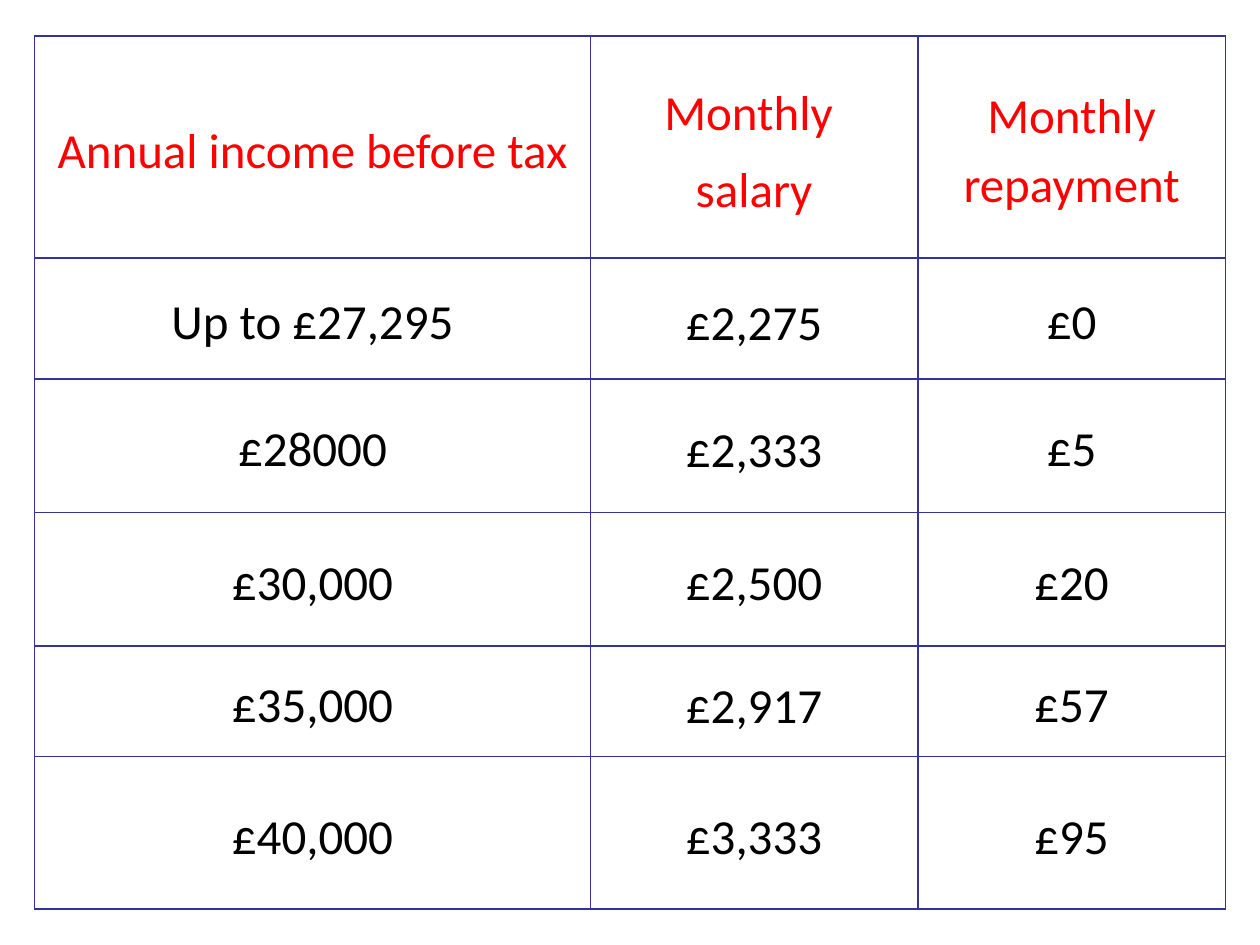
"""Build a slide with a table of income, salary and monthly repayment."""
from dataclasses import dataclass

from lxml.etree import SubElement
from pptx import Presentation
from pptx.dml.color import RGBColor
from pptx.enum.text import MSO_ANCHOR, PP_ALIGN
from pptx.oxml.ns import qn
from pptx.table import _Cell
from pptx.util import Pt

HUES = {"head": "FF0000", "body": "000000", "rule": "333399"}


@dataclass
class Column:
    width: float
    insets: tuple[float, float, float, float]


@dataclass
class Row:
    height: float
    texts: tuple[str, str, str]
    hue: str = "body"


WIDE = (3.6, 1.44, 3.6, 1.44)
TIGHT = (0.72, 0.72, 0.72, 0)
COLS = [Column(317.5, WIDE), Column(187.2, TIGHT), Column(175.7, WIDE)]
ROWS = [
    Row(126.7, ("Annual income before tax", "Monthly \nsalary",
                "Monthly repayment"), "head"),
    Row(69.1, ("Up to £27,295", "£2,275", "£0")),
    Row(76.3, ("£28000", "£2,333", "£5")),
    Row(76.3, ("£30,000", "£2,500", "£20")),
    Row(63.4, ("£35,000", "£2,917", "£57")),
    Row(87.1, ("£40,000", "£3,333", "£95")),
]


def frame(cell: _Cell) -> None:
    """Rule all four sides of a cell and leave it unfilled."""
    props = cell._tc.get_or_add_tcPr()
    for side in "LRTB":
        line = SubElement(props, qn(f"a:ln{side}"), w=str(Pt(1)))
        fill = SubElement(line, qn("a:solidFill"))
        SubElement(fill, qn("a:srgbClr"), val=HUES["rule"])
    cell.fill.background()


def write(cell: _Cell, text: str, hue: str, col: Column) -> None:
    """Put centred text in a cell."""
    (cell.margin_left, cell.margin_top,
     cell.margin_right, cell.margin_bottom) = map(Pt, col.insets)
    cell.vertical_anchor = MSO_ANCHOR.MIDDLE
    cell.text_frame.text = text
    for i, para in enumerate(cell.text_frame.paragraphs):
        para.alignment = PP_ALIGN.CENTER
        para.line_spacing = 1.15
        para.space_before = Pt(4.3 if i else 0)
        para.font.name = "Calibri"
        para.font.size = Pt(28)
        para.font.color.rgb = RGBColor.from_string(HUES[hue])


def main() -> None:
    """Draw the table and save the deck."""
    deck = Presentation()
    deck.slide_width, deck.slide_height = Pt(720), Pt(540)
    slide = deck.slides.add_slide(deck.slide_layouts[6])
    width = sum(col.width for col in COLS)
    height = sum(row.height for row in ROWS)
    table = slide.shapes.add_table(len(ROWS), len(COLS), Pt(19.8), Pt(20.7),
                                   Pt(width), Pt(height)).table
    table.first_row = table.horz_banding = False
    for c, col in enumerate(COLS):
        table.columns[c].width = Pt(col.width)
    for r, row in enumerate(ROWS):
        table.rows[r].height = Pt(row.height)
        for c, (text, col) in enumerate(zip(row.texts, COLS)):
            cell = table.cell(r, c)
            frame(cell)
            write(cell, text, row.hue, col)
    deck.save("out.pptx")


if __name__ == "__main__":
    main()
